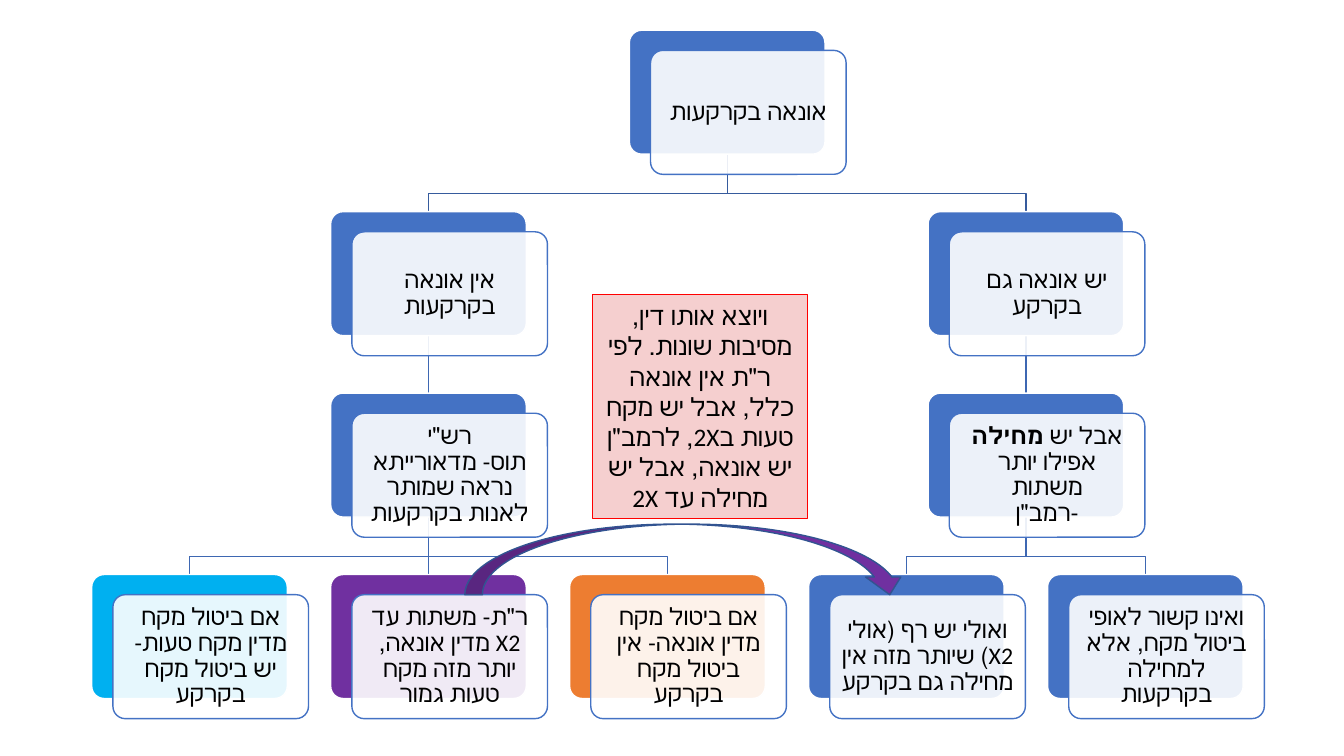
"""Build a right-to-left tree slide about overcharging in land sales."""
import pptx
import pptx.util
import pptx.dml.color
import pptx.enum.shapes
import pptx.enum.text
import pptx.oxml
import pptx.oxml.ns
from pptx.util import Inches

HUES = {"blue": "4472C4", "orange": "ED7D31", "purple": "7030A0", "cyan": "00B0F0",
        "white": "FFFFFF", "black": "000000", "upper": "365B9D", "lower": "3E67B2",
        "rim": "325491", "red": "FF0000", "note": "CC0000"}
KINDS = pptx.enum.shapes.MSO_SHAPE
LEFT, TOP, STEP, RISE = 0.91, 0.3, 2.37, 1.8
WIDE, HIGH, SHIFT, DROP = 1.94, 1.23, 0.21, 0.2
NODES = {
    "root": (2.25, 0, None, "blue", "אונאה בקרקעות"),
    "yes": (3.5, 1, "root", "blue", "יש אונאה גם בקרקע"),
    "waive": (3.5, 2, "yes", "blue", "אבל יש *מחילה* אפילו יותר משתות\n-רמב\"ן"),
    "apart": (4, 3, "waive", "blue", "ואינו קשור לאופי ביטול מקח, אלא למחילה בקרקעות"),
    "limit": (3, 3, "waive", "blue", "ואולי יש רף (אולי X2) שיותר מזה אין מחילה גם בקרקע"),
    "no": (1, 1, "root", "blue", "אין אונאה בקרקעות"),
    "rashi": (1, 2, "no", "blue", "רש\"י\nתוס- מדאורייתא נראה שמותר לאנות בקרקעות"),
    "fraud": (2, 3, "rashi", "orange", "אם ביטול מקח מדין אונאה- אין ביטול מקח בקרקע"),
    "sixth": (1, 3, "rashi", "purple", "ר\"ת- משתות עד X2 מדין אונאה, יותר מזה מקח טעות גמור"),
    "error": (0, 3, "rashi", "cyan", "אם ביטול מקח מדין מקח טעות- יש ביטול מקח בקרקע"),
}
NOTE = ("ויוצא אותו דין, מסיבות שונות. לפי ר\"ת אין אונאה כלל, אבל יש מקח טעות ב2X, "
        "לרמב\"ן יש אונאה, אבל יש מחילה עד 2X")


def hue(name):
    return pptx.dml.color.RGBColor.from_string(HUES[name])


def add_shape(slide, kind, box, fill, line, width=1, alpha=100):
    shape = slide.shapes.add_shape(kind, *map(Inches, box))
    shape.shadow.inherit = False
    shape.fill.solid()
    shape.fill.fore_color.rgb = hue(fill)
    if alpha < 100:
        color = shape._element.spPr.find(".//" + pptx.oxml.ns.qn("a:srgbClr"))
        color.append(pptx.oxml.parse_xml(
            f'<a:alpha {pptx.oxml.ns.nsdecls("a")} val="{alpha * 1000}"/>'))
    shape.line.color.rgb = hue(line)
    shape.line.width = pptx.util.Pt(width)
    return shape


def write(shape, text, size, space=None):
    frame = shape.text_frame
    frame.word_wrap = True
    frame.vertical_anchor = pptx.enum.text.MSO_ANCHOR.MIDDLE
    para = frame.paragraphs[0]
    para.alignment = pptx.enum.text.PP_ALIGN.CENTER
    para.line_spacing = space
    para._p.get_or_add_pPr().set("rtl", "1")
    para.font.size = pptx.util.Pt(size)
    para.font.name = "Calibri"
    para.font.color.rgb = hue("black")
    for place, part in enumerate(text.split("*")):
        for row, words in enumerate(part.split("\n")):
            if row:
                para.add_line_break()
            run = para.add_run()
            run.text = words
            if place % 2:
                run.font.bold = True


def add_card(slide, col, row, fill, text):
    x, y = LEFT + col * STEP, TOP + row * RISE
    back = add_shape(slide, KINDS.ROUNDED_RECTANGLE, (x, y, WIDE, HIGH), fill, "white")
    front = add_shape(slide, KINDS.ROUNDED_RECTANGLE, (x + SHIFT, y + DROP, WIDE, HIGH),
                      "white", "blue", alpha=90)
    for shape in (back, front):
        shape.adjustments[0] = 0.1
    frame = front.text_frame
    frame.margin_left = frame.margin_right = Inches(0.07)
    frame.margin_top = frame.margin_bottom = Inches(0.07)
    write(front, text, 17, 0.9)
    return back


def add_link(slide, above, below, color):
    start, end = (card.left + card.width // 2 for card in (above, below))
    top, foot = above.top + above.height, below.top
    if start == end:
        link = slide.shapes.add_connector(
            pptx.enum.shapes.MSO_CONNECTOR.STRAIGHT, start, top, end, foot)
        link.begin_connect(above, 2)
        link.end_connect(below, 0)
        link._element.spPr.append(pptx.oxml.parse_xml(
            f'<a:effectLst {pptx.oxml.ns.nsdecls("a")}/>'))
    else:
        bend = foot - Inches(0.18)
        route = slide.shapes.build_freeform(start, top, 1)
        route.add_line_segments([(start, bend), (end, bend), (end, foot)], close=False)
        link = route.convert_to_shape()
        link.fill.background()
        link.shadow.inherit = False
    link.line.color.rgb = hue(color)
    link.line.width = pptx.util.Pt(1)
    return link


def main():
    deck = pptx.Presentation()
    deck.slide_width, deck.slide_height = Inches(13.33), Inches(7.5)
    slide = deck.slides.add_slide(deck.slide_layouts[6])
    cards = {name: add_card(slide, col, row, fill, text)
             for name, (col, row, _, fill, text) in NODES.items()}
    for name, (_, _, above, _, _) in NODES.items():
        if above:
            color = "upper" if above == "root" else "lower"
            link = add_link(slide, cards[above], cards[name], color)
            cards["root"]._element.addprevious(link._element)
    add_shape(slide, KINDS.CURVED_DOWN_ARROW, (4.61, 5.2, 4.39, 0.7), "purple", "rim")
    note = add_shape(slide, KINDS.RECTANGLE, (5.88, 2.92, 2.13, 2.22), "note", "red", 0.75, 19)
    write(note, NOTE, 18)
    deck.save("out.pptx")


if __name__ == "__main__":
    main()
